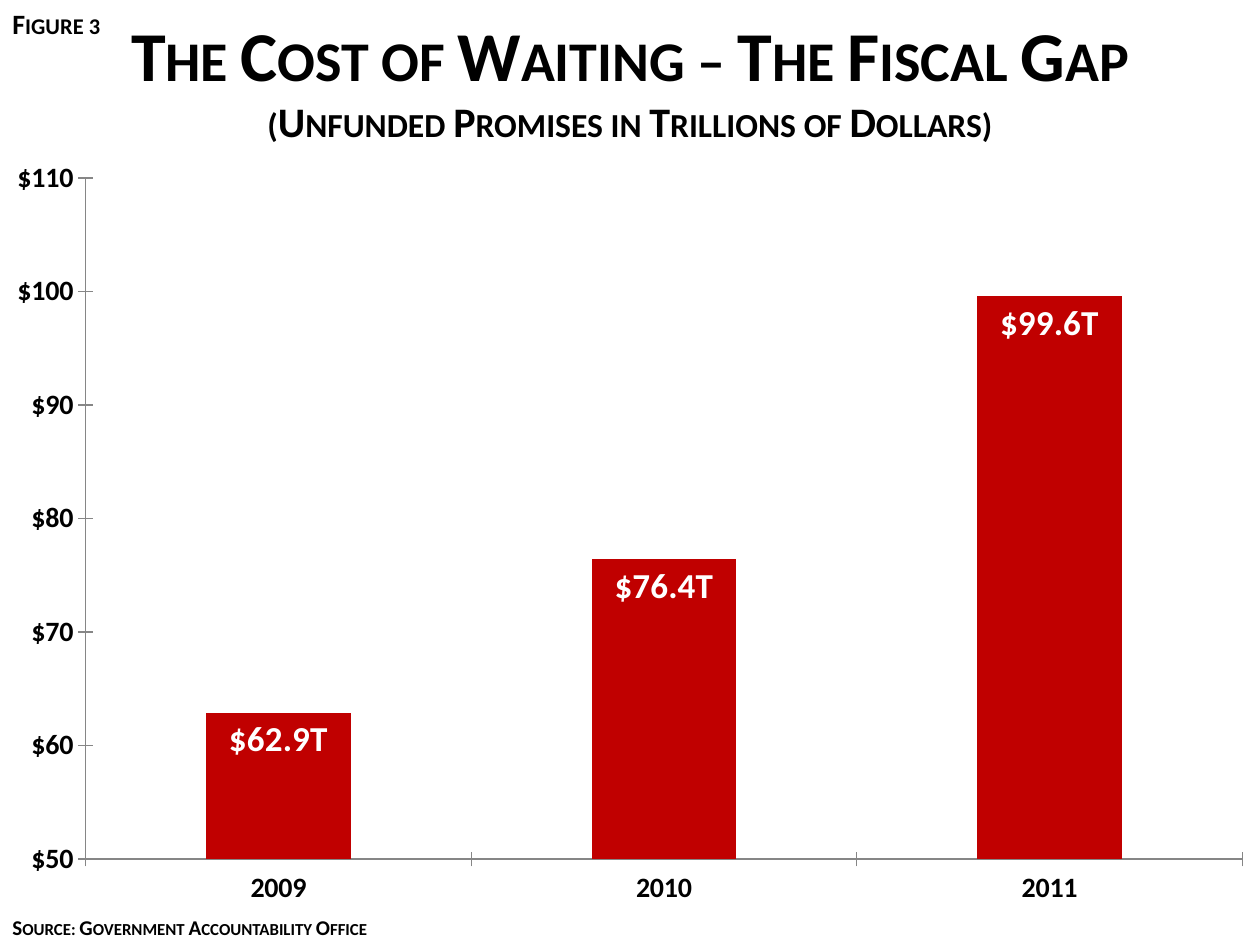
import dataclasses

import lxml.etree
import pptx
import pptx.chart.data
import pptx.dml.color
import pptx.enum.chart
import pptx.enum.text
import pptx.oxml
import pptx.oxml.ns
import pptx.util

Inches = pptx.util.Inches
Pt = pptx.util.Pt


@dataclasses.dataclass(frozen=True)
class Theme:
    font: str = "Calibri"
    ink: str = "000000"
    paper: str = "FFFFFF"
    bar: str = "C00000"
    axis: str = "868686"
    title: int = 40
    subtitle: int = 24
    label: int = 20
    chart: int = 18
    body: int = 16
    source: int = 12


class FigurePage:
    """Hold the theme and the current slide, and add each kind of element."""

    def __init__(self, page, theme):
        self.page = page
        self.theme = theme

    def style(self, font, size, color, bold=True):
        font.name = self.theme.font
        font.size = Pt(size)
        font.bold = bold
        font.color.rgb = pptx.dml.color.RGBColor.from_string(color)

    def paint(self, target, color):
        target.solid()
        target.fore_color.rgb = pptx.dml.color.RGBColor.from_string(color)

    def stroke(self, line, color):
        self.paint(line.fill, color)
        line.width = Pt(0.75)

    def span(self, para, text, size):
        span = para.add_run()
        span.text = text
        self.style(span.font, size, self.theme.ink)
        span._r.get_or_add_rPr().set("cap", "small")

    def title(self, heading, subheading, left, top, width, height):
        box = self.page.shapes.title
        box.left, box.top = Inches(left), Inches(top)
        box.width, box.height = Inches(width), Inches(height)
        frame = box.text_frame
        frame.vertical_anchor = pptx.enum.text.MSO_ANCHOR.MIDDLE
        para = frame.paragraphs[0]
        para.alignment = pptx.enum.text.PP_ALIGN.CENTER
        self.span(para, heading, self.theme.title)
        para.add_line_break()
        self.span(para, subheading, self.theme.subtitle)

    def text(self, text, size, left, top, width, height):
        box = self.page.shapes.add_textbox(
            Inches(left), Inches(top), Inches(width), Inches(height))
        frame = box.text_frame
        frame.word_wrap = True
        frame.auto_size = pptx.enum.text.MSO_AUTO_SIZE.SHAPE_TO_FIT_TEXT
        self.span(frame.paragraphs[0], text, size)

    def axis(self, axis):
        axis.major_tick_mark = pptx.enum.chart.XL_TICK_MARK.CROSS
        self.style(axis.tick_labels.font, self.theme.body, self.theme.ink)
        self.stroke(axis.format.line, self.theme.axis)

    def plot_area(self, chart, layout):
        area = chart._chartSpace.chart.plotArea
        for old in area.findall(pptx.oxml.ns.qn("c:layout")):
            area.remove(old)
        modes = '<c:layoutTarget val="inner"/><c:xMode val="edge"/><c:yMode val="edge"/>'
        sizes = "".join(f'<c:{key} val="{value}"/>' for key, value in layout.items())
        area.insert(0, pptx.oxml.parse_xml(
            f'<c:layout {pptx.oxml.ns.nsdecls("c")}><c:manualLayout>'
            f'{modes}{sizes}</c:manualLayout></c:layout>'))
        area.append(pptx.oxml.parse_xml(
            f'<c:spPr {pptx.oxml.ns.nsdecls("c", "a")}><a:solidFill>'
            f'<a:srgbClr val="{self.theme.paper}"/></a:solidFill></c:spPr>'))

    def columns(self, values, left, top, width, height):
        data = pptx.chart.data.CategoryChartData()
        data.categories = list(values)
        data.add_series("Series 1", list(values.values()))
        chart = self.page.shapes.add_chart(
            pptx.enum.chart.XL_CHART_TYPE.COLUMN_CLUSTERED,
            Inches(left), Inches(top), Inches(width), Inches(height), data).chart
        chart.has_legend = False
        chart.has_title = False
        self.style(chart.font, self.theme.chart, self.theme.ink, bold=False)
        self.axis(chart.category_axis)

        scale = chart.value_axis
        self.axis(scale)
        scale.minimum_scale, scale.maximum_scale, scale.major_unit = 50, 110, 10
        scale.tick_labels.number_format = '"$"#,##0'
        scale.tick_labels.number_format_is_linked = False
        self.stroke(scale.major_gridlines.format.line, self.theme.paper)

        plot = chart.plots[0]
        plot.vary_by_categories = False
        plot.gap_width, plot.overlap = 167, -57
        series = plot.series[0]
        self.paint(series.format.fill, self.theme.bar)
        labels = series.data_labels
        labels.show_value = True
        labels.number_format = '"$"0.0"T"'
        labels.number_format_is_linked = False
        labels.position = pptx.enum.chart.XL_LABEL_POSITION.INSIDE_END
        self.style(labels.font, self.theme.label, self.theme.paper)
        self.plot_area(chart, {"x": 0.068, "y": 0.026, "w": 0.918, "h": 0.865})


def main():
    deck = pptx.Presentation()
    deck.slide_width, deck.slide_height = Inches(10), Inches(7.5)
    theme = Theme()
    figure = FigurePage(deck.slides.add_slide(deck.slide_layouts[5]), theme)
    figure.title("The Cost of Waiting – The Fiscal Gap",
                 "(Unfunded Promises in Trillions of Dollars)", 0, 0, 10, 1.25)
    figure.columns({"2009": 62.9, "2010": 76.4, "2011": 99.6}, 0, 1.25, 10, 6.25)
    figure.text("Source: Government Accountability Office", theme.source, 0, 7.21, 10, 0.3)
    figure.text("Figure 3", theme.body, 0, 0, 1.42, 0.37)
    deck.save("out.pptx")


if __name__ == "__main__":
    main()
